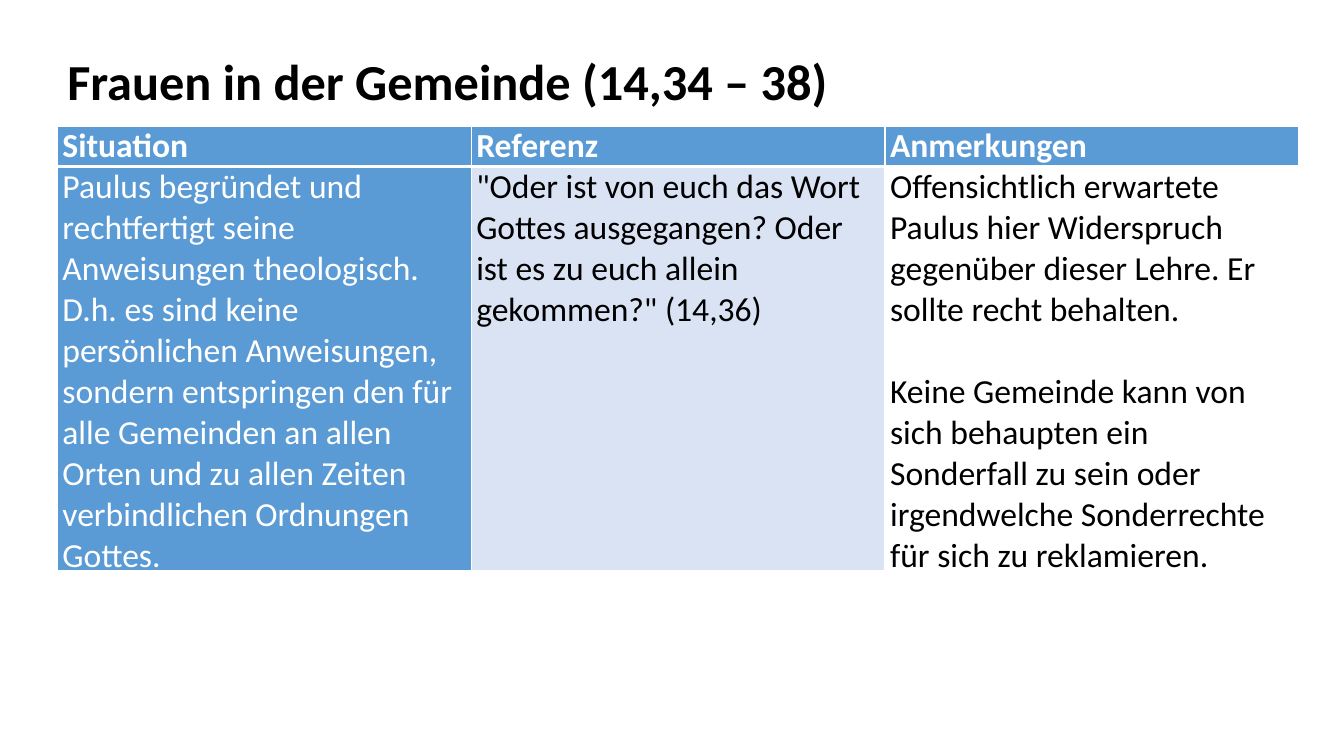
from lxml import etree
from pptx import Presentation
from pptx import util as u
from pptx.dml.color import RGBColor
from pptx.enum import text
from pptx.oxml import ns

Pt = u.Pt
COLORS = {"black": "000000", "white": "FFFFFF", "blue": "5B9BD5", "pale": "DAE3F3"}


class SlideBuilder:
    font = "Calibri"
    size = 24
    line_height = 29.3

    def __init__(self, slide):
        self.s = slide

    def color(self, name):
        return RGBColor.from_string(COLORS[name])

    def paragraphs(self, tf, contents, size, color, bold=False):
        for i, content in enumerate(contents):
            p = tf.paragraphs[0] if i == 0 else tf.add_paragraph()
            p.text = content
            if i:
                p.space_before = Pt(self.line_height)
            p.font.name, p.font.size, p.font.bold = self.font, Pt(size), bold
            p.font.color.rgb = self.color(color)

    def title(self, content, left, top, width, height):
        sp = self.s.shapes.add_textbox(Pt(left), Pt(top), Pt(width), Pt(height))
        tf = sp.text_frame
        tf.word_wrap = False
        tf.auto_size = text.MSO_AUTO_SIZE.SHAPE_TO_FIT_TEXT
        self.paragraphs(tf, [content], 36, "black", True)

    def borders(self, cell, widths):
        tcPr = cell._tc.get_or_add_tcPr()
        for side, width in widths.items():
            ln = etree.SubElement(tcPr, ns.qn(f"a:ln{side}"), w=str(Pt(width)))
            fill = etree.SubElement(ln, ns.qn("a:solidFill"))
            etree.SubElement(fill, ns.qn("a:srgbClr"), val=COLORS["white"])

    def cell(self, cell, contents, fill, color, bold, widths):
        cell.margin_left = cell.margin_right = Pt(3.6)
        cell.margin_top = cell.margin_bottom = 0
        self.borders(cell, widths)
        cell.fill.solid()
        cell.fill.fore_color.rgb = self.color(fill)
        self.paragraphs(cell.text_frame, contents, self.size, color, bold)

    def table(self, columns, left, top, col_width, heights):
        frame = self.s.shapes.add_table(2, len(columns), Pt(left), Pt(top),
                                        Pt(col_width * len(columns)), Pt(sum(heights)))
        table = frame.table
        table.horz_banding = False
        for row, height in zip(table.rows, heights):
            row.height = Pt(height)
        for i, (heading, body, fill, color) in enumerate(columns):
            table.columns[i].width = Pt(col_width)
            self.cell(table.cell(0, i), [heading], "blue", "white", True,
                      {"L": 1, "R": 1, "T": 1, "B": 3})
            self.cell(table.cell(1, i), body, fill, color, False,
                      {"L": 1, "R": 1, "T": 3, "B": 1})


def main():
    prs = Presentation()
    prs.slide_width, prs.slide_height = Pt(960), Pt(540)
    slide = SlideBuilder(prs.slides.add_slide(prs.slide_layouts[6]))

    # Title
    slide.title("Frauen in der Gemeinde (14,34 – 38)", 41, 32.4, 564, 51)

    # Table: heading, body paragraphs, body fill, body text colour
    columns = [
        ("Situation",
         ["Paulus begründet und rechtfertigt seine Anweisungen theologisch. "
          "D.h. es sind keine persönlichen Anweisungen, sondern entspringen den "
          "für alle Gemeinden an allen Orten und zu allen Zeiten verbindlichen "
          "Ordnungen Gottes."], "blue", "white"),
        ("Referenz",
         ['"Oder ist von euch das Wort Gottes ausgegangen? '
          'Oder ist es zu euch allein gekommen?" (14,36)'], "pale", "black"),
        ("Anmerkungen",
         ["Offensichtlich erwartete Paulus hier Widerspruch gegenüber dieser "
          "Lehre. Er sollte recht behalten.",
          "Keine Gemeinde kann von sich behaupten ein Sonderfall zu sein oder "
          "irgendwelche Sonderrechte für sich zu reklamieren."], "white", "black"),
    ]
    slide.table(columns, 41, 90, 295.6, [29, 288])

    prs.save("out.pptx")


if __name__ == "__main__":
    main()
